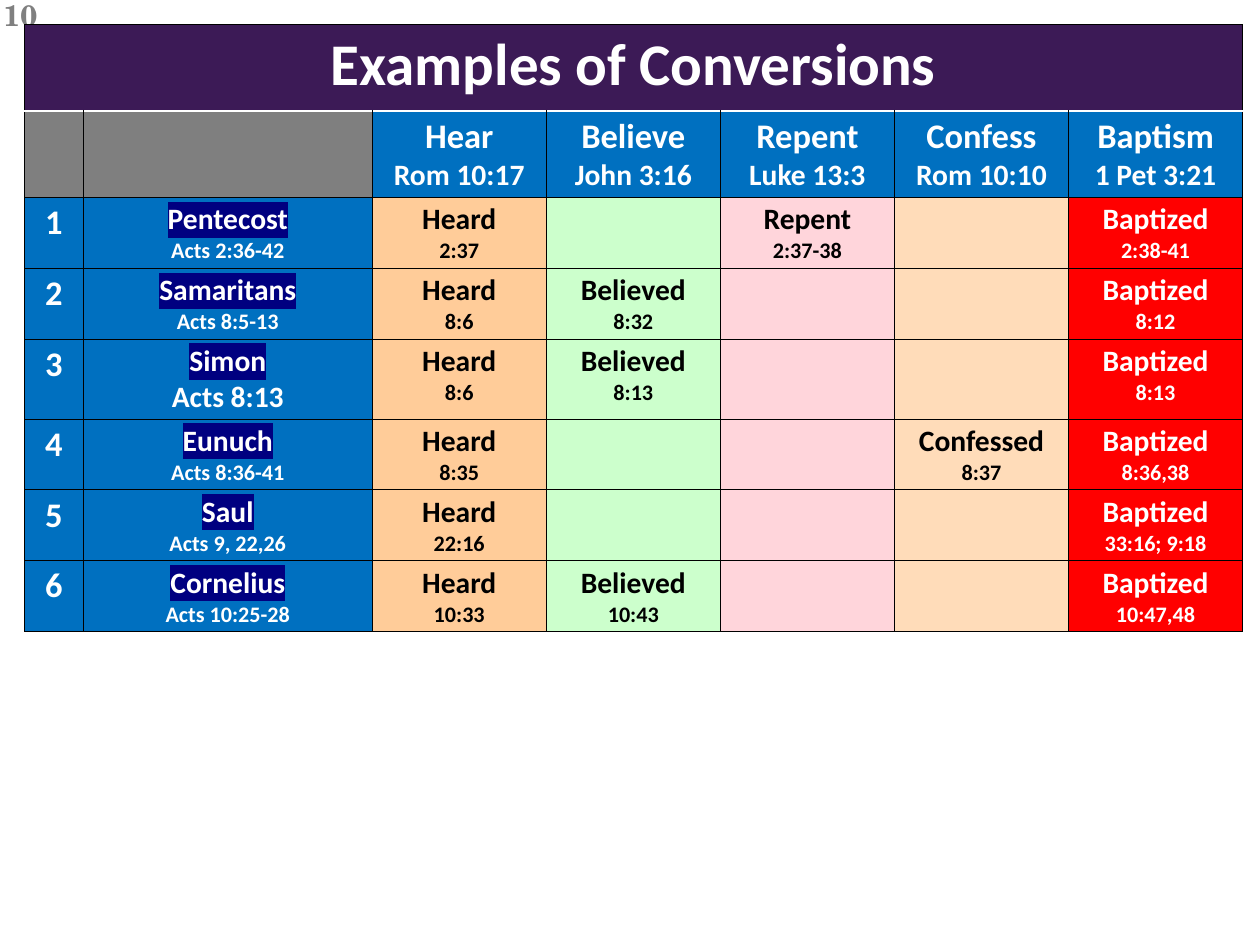
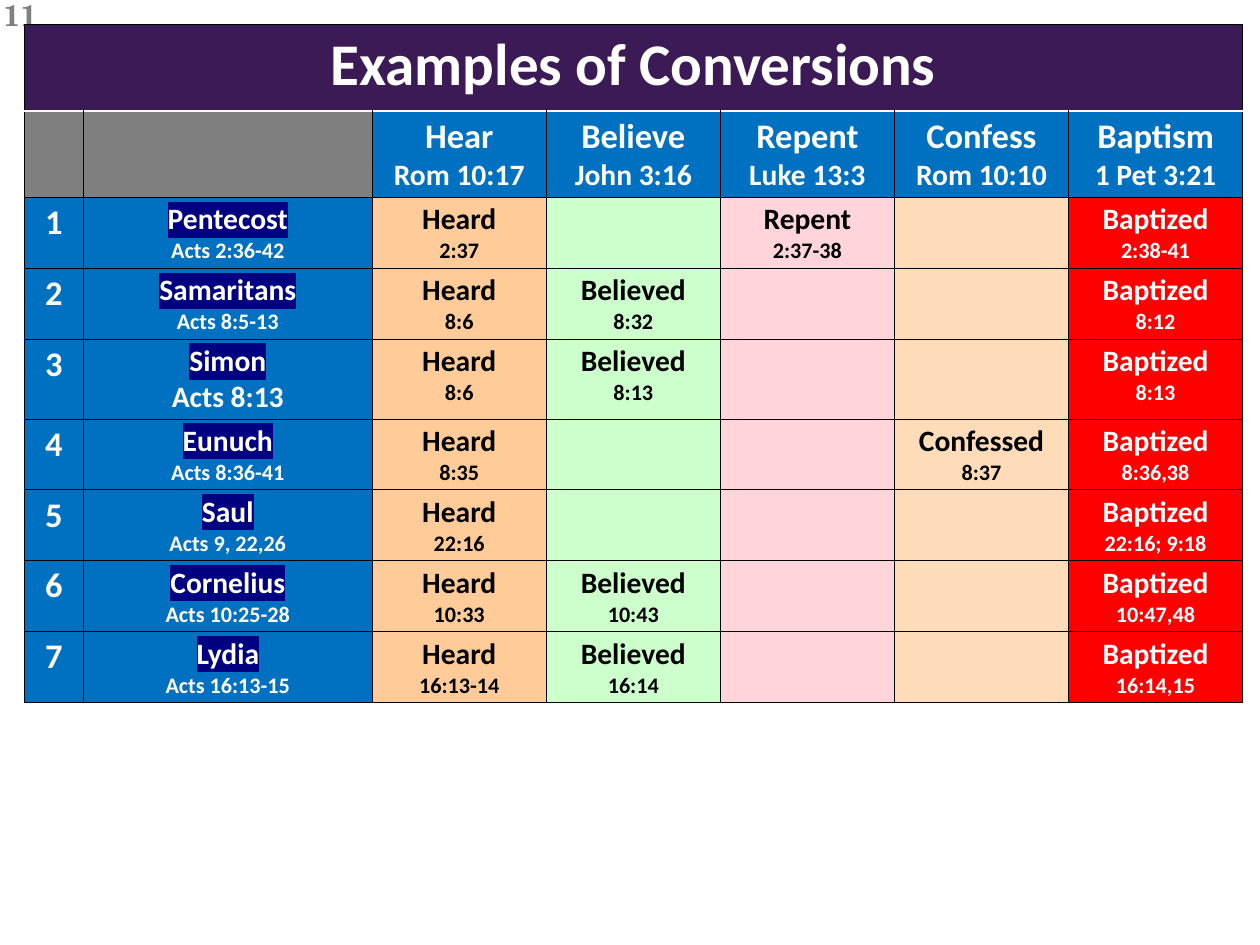
from dataclasses import dataclass, replace

from lxml.etree import SubElement
from pptx import Presentation
from pptx.dml.color import RGBColor
from pptx.enum.text import PP_ALIGN as Align
from pptx.oxml.ns import qn
from pptx.util import Cm, Pt

COLORS = {
    "title": "3C1A56", "blue": "0070C0", "blank": "7F7F7F", "highlight": "000080",
    "hear": "FFCC99", "believe": "CCFFCC", "repent": "FFD5DB", "confess": "FFDCB9",
    "baptism": "FF0000", "white": "FFFFFF", "black": "000000", "number": "808080",
}
THIN = ("black", 0.75)
THICK = ("white", 2)
COLUMN_WIDTHS = [1.69, 8.28] + [4.99] * 5
TITLE_HEIGHT, EXAMPLE_HEIGHT = 2.48, 1.98

STEPS = [
    ("Hear", "Rom 10:17", "Heard", "hear", "black"),
    ("Believe", "John 3:16", "Believed", "believe", "black"),
    ("Repent", "Luke 13:3", "Repent", "repent", "black"),
    ("Confess", "Rom 10:10", "Confessed", "confess", "black"),
    ("Baptism", "1 Pet 3:21", "Baptized", "baptism", "white"),
]


@dataclass
class Example:
    """One conversion and the verse for each step."""
    name: str
    passage: str
    verses: tuple
    passage_size: int = 18


EXAMPLES = [
    Example("Pentecost", "Acts 2:36-42", ("2:37", "", "2:37-38", "", "2:38-41")),
    Example("Samaritans", "Acts 8:5-13", ("8:6", "8:32", "", "", "8:12")),
    Example("Simon", "Acts 8:13", ("8:6", "8:13", "", "", "8:13"), passage_size=24),
    Example("Eunuch", "Acts 8:36-41", ("8:35", "", "", "8:37", "8:36,38")),
    Example("Saul", "Acts 9, 22,26", ("22:16", "", "", "", "22:16; 9:18")),
    Example("Cornelius", "Acts 10:25-28", ("10:33", "10:43", "", "", "10:47,48")),
    Example("Lydia", "Acts 16:13-15", ("16:13-14", "16:14", "", "", "16:14,15")),
]


def rgb(name):
    """Return the named colour."""
    return RGBColor.from_string(COLORS[name])


def write(paragraph, text, size=24, color="white", font="Calibri", align=Align.CENTER, highlight=None):
    """Write bold formatted text into a paragraph."""
    paragraph.alignment = align
    run = paragraph.add_run()
    run.text = text
    run.font.size, run.font.bold, run.font.name = Pt(size), True, font
    run.font.color.rgb = rgb(color)
    if highlight:
        properties = run.font.fill._xPr
        mark = SubElement(properties, qn("a:highlight"))
        SubElement(mark, qn("a:srgbClr"), val=COLORS[highlight])
        properties.find(qn("a:solidFill")).addnext(mark)


def set_borders(cell, top=THIN, bottom=THIN):
    """Draw the four borders of a cell."""
    properties = cell._tc.get_or_add_tcPr()
    for side, (color, width) in zip("LRTB", (THIN, THIN, top, bottom)):
        line = SubElement(properties, qn(f"a:ln{side}"), w=str(Pt(width)))
        fill = SubElement(line, qn("a:solidFill"))
        SubElement(fill, qn("a:srgbClr"), val=COLORS[color])


def fill_cell(cell, fill, *lines, **borders):
    """Give a cell its borders, its fill and its lines of text."""
    set_borders(cell, **borders)
    cell.fill.solid()
    cell.fill.fore_color.rgb = rgb(fill)
    frame = cell.text_frame
    for index, (text, style) in enumerate(lines):
        write(frame.add_paragraph() if index else frame.paragraphs[0], text, **style)


def add_page_number(slide, number):
    """Write the page number in the top left corner."""
    box = slide.shapes.add_textbox(Cm(-0.15), Cm(-0.2), Cm(3.4), Cm(0.84))
    box.text_frame.word_wrap = True
    write(box.text_frame.paragraphs[0], str(number), color="number",
          font="TeX Gyre Schola", align=Align.LEFT)


def fill_heading(table):
    """Fill the title row and the row of steps."""
    for cell in table.rows[0].cells:
        fill_cell(cell, "title", bottom=THICK)
    title = table.cell(0, 0)
    title.merge(table.cell(0, len(COLUMN_WIDTHS) - 1))
    write(title.text_frame.paragraphs[0], "Examples of Conversions", size=48)
    for column in range(2):
        fill_cell(table.cell(1, column), "blank", top=THICK)
    for column, (step, verse, *_) in enumerate(STEPS, 2):
        fill_cell(table.cell(1, column), "blue", (step, {"size": 28}), (verse, {}), top=THICK)


def fill_example(table, row, number, example):
    """Fill the row of one conversion."""
    fill_cell(table.cell(row, 0), "blue", (str(number), {"size": 28}))
    fill_cell(table.cell(row, 1), "blue", (example.name, {"highlight": "highlight"}),
              (example.passage, {"size": example.passage_size}))
    for column, (step, verse) in enumerate(zip(STEPS, example.verses), 2):
        *_, done, fill, color = step
        lines = [(done, {"color": color}), (verse, {"size": 18, "color": color})] if verse else []
        fill_cell(table.cell(row, column), fill, *lines)


def add_conversions(slide, examples):
    """Add the table of conversions."""
    heights = [TITLE_HEIGHT] * 2 + [EXAMPLE_HEIGHT] * len(examples)
    table = slide.shapes.add_table(len(heights), len(COLUMN_WIDTHS), Cm(0.7), Cm(0.7),
                                   Cm(sum(COLUMN_WIDTHS)), Cm(sum(heights))).table
    table.first_row = table.horz_banding = False
    for column, width in zip(table.columns, COLUMN_WIDTHS):
        column.width = Cm(width)
    for row, height in zip(table.rows, heights):
        row.height = Cm(height)
    fill_heading(table)
    for number, example in enumerate(examples, 1):
        fill_example(table, number + 1, number, example)


def main():
    """Build the two slides and save them."""
    presentation = Presentation()
    presentation.slide_width, presentation.slide_height = Cm(36.12), Cm(27.1)
    first_examples = EXAMPLES[:6]
    saul = first_examples[4]
    first_examples[4] = replace(saul, verses=saul.verses[:4] + ("33:16; 9:18",))
    for number, examples in enumerate((first_examples, EXAMPLES), 10):
        slide = presentation.slides.add_slide(presentation.slide_layouts[6])
        add_page_number(slide, number)
        add_conversions(slide, examples)
    presentation.save("out.pptx")


if __name__ == "__main__":
    main()
